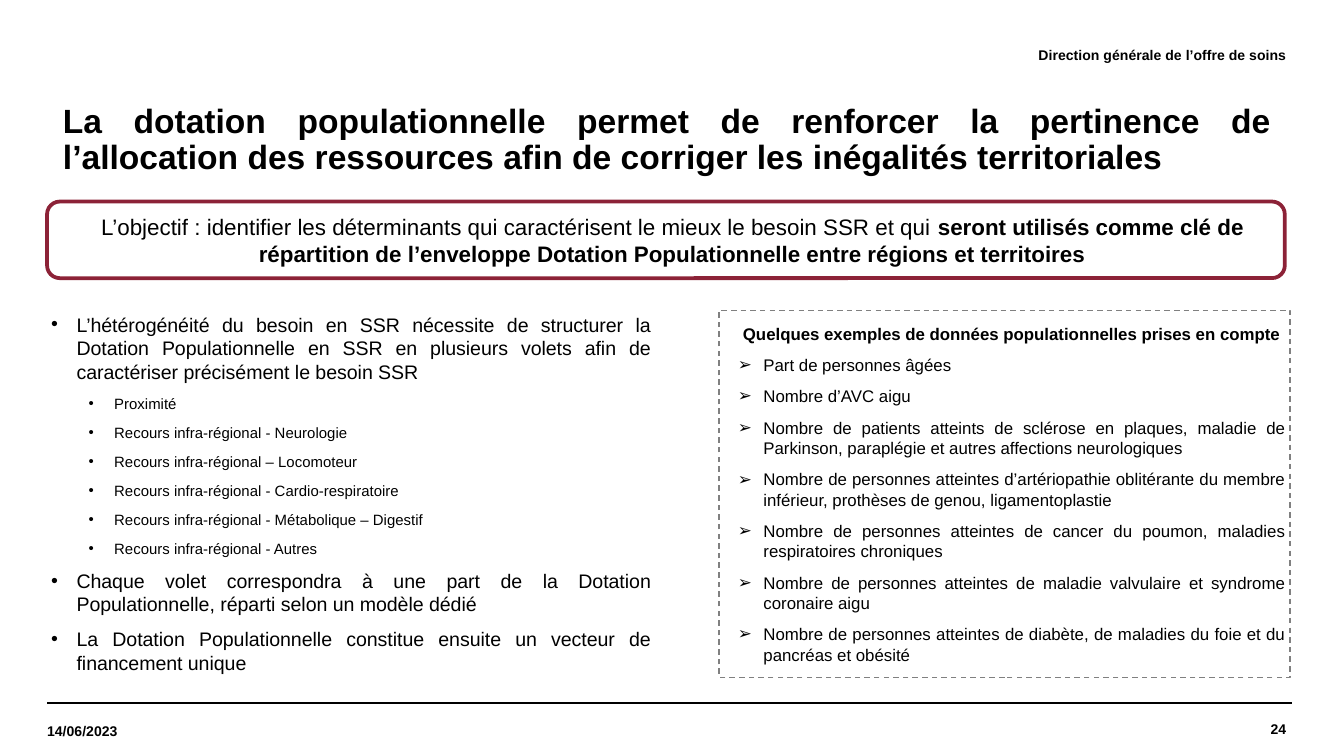
from dataclasses import dataclass

from lxml import etree
from pptx import Presentation
from pptx.dml.color import RGBColor
from pptx.enum.dml import MSO_LINE
from pptx.enum.shapes import MSO_CONNECTOR, MSO_SHAPE
from pptx.enum.text import MSO_ANCHOR, PP_ALIGN
from pptx.oxml.ns import qn
from pptx.util import Inches, Pt

LEFT, RIGHT = PP_ALIGN.LEFT, PP_ALIGN.RIGHT
CENTER, JUSTIFY = PP_ALIGN.CENTER, PP_ALIGN.JUSTIFY
MIDDLE = MSO_ANCHOR.MIDDLE
RECT, ROUND = MSO_SHAPE.RECTANGLE, MSO_SHAPE.ROUNDED_RECTANGLE
STRAIGHT, DASH = MSO_CONNECTOR.STRAIGHT, MSO_LINE.DASH


@dataclass(frozen=True)
class Theme:
    """Hold the colours, font and type sizes of the slide."""
    ink: RGBColor = RGBColor(0, 0, 0)
    wine: RGBColor = RGBColor(0x8C, 0x22, 0x37)
    grey: RGBColor = RGBColor(0x80, 0x80, 0x80)
    font: str = "Arial"
    title: float = 18
    goal: float = 12
    body: float = 10.5
    data: float = 9
    sub: float = 8
    small: float = 7.5


THEME = Theme()

TITLE = ("La dotation populationnelle permet de renforcer la pertinence de "
         "l’allocation des ressources afin de corriger les inégalités territoriales")
GOAL = ("L’objectif : identifier les déterminants qui caractérisent le mieux "
        "le besoin SSR et qui ")
KEY = ("seront utilisés comme clé de répartition de l’enveloppe Dotation "
       "Populationnelle entre régions et territoires")
NEED = ("L’hétérogénéité du besoin en SSR nécessite de structurer la Dotation "
        "Populationnelle en SSR en plusieurs volets afin de caractériser "
        "précisément le besoin SSR")
PARTS = [
    "Proximité",
    "Recours infra-régional - Neurologie",
    "Recours infra-régional – Locomoteur",
    "Recours infra-régional - Cardio-respiratoire",
    "Recours infra-régional - Métabolique – Digestif",
    "Recours infra-régional - Autres",
]
ENDS = [
    "Chaque volet correspondra à une part de la Dotation Populationnelle, "
    "réparti selon un modèle dédié",
    "La Dotation Populationnelle constitue ensuite un vecteur de financement unique",
]
HEAD = "Quelques exemples de données populationnelles prises en compte"
DATA = [
    "Part de personnes âgées",
    "Nombre d’AVC aigu",
    "Nombre de patients atteints de sclérose en plaques, maladie de Parkinson, "
    "paraplégie et autres affections neurologiques",
    "Nombre de personnes atteintes d’artériopathie oblitérante du membre "
    "inférieur, prothèses de genou, ligamentoplastie",
    "Nombre de personnes atteintes de cancer du poumon, maladies respiratoires "
    "chroniques",
    "Nombre de personnes atteintes de maladie valvulaire et syndrome coronaire aigu",
    "Nombre de personnes atteintes de diabète, de maladies du foie et du "
    "pancréas et obésité",
]


def set_frame(shape, inset):
    """Wrap the text of a shape, centre it in height and set its insets."""
    frame = shape.text_frame
    frame.word_wrap = True
    frame.vertical_anchor = MIDDLE
    if inset is not None:
        frame.margin_left = frame.margin_right = Inches(inset)
        frame.margin_top = frame.margin_bottom = Inches(inset)
    return frame


def add_box(slide, left, top, width, height, inset=0):
    """Add a text box and return its frame."""
    box = slide.shapes.add_textbox(
        Inches(left), Inches(top), Inches(width), Inches(height))
    return set_frame(box, inset)


def add_panel(slide, kind, left, top, width, height, color, weight,
              dash=None, inset=None):
    """Add an outlined shape without fill and return its frame."""
    panel = slide.shapes.add_shape(
        kind, Inches(left), Inches(top), Inches(width), Inches(height))
    panel.shadow.inherit = False
    panel.fill.background()
    panel.line.color.rgb = color
    panel.line.width = Pt(weight)
    if dash is not None:
        panel.line.dash_style = dash
    return set_frame(panel, inset)


def add_rule(slide, left, top, width):
    """Add a thin horizontal line."""
    rule = slide.shapes.add_connector(
        STRAIGHT, Inches(left), Inches(top), Inches(left + width), Inches(top))
    rule.line.color.rgb = THEME.ink
    rule.line.width = Pt(0.8)
    etree.SubElement(rule._element.spPr, qn("a:effectLst"))


def add_run(para, text, size, bold=False):
    """Add a run of text to a paragraph."""
    run = para.add_run()
    run.text = text
    font = run.font
    font.name, font.size, font.bold = THEME.font, Pt(size), bold
    font.color.rgb = THEME.ink


def add_text(frame, text, size, bold=False, align=LEFT, indent=0, hang=0,
             after=0, lines=None, bullet=None, level=0):
    """Write one paragraph into a frame and return it."""
    para = frame.paragraphs[0]
    if para.runs:
        para = frame.add_paragraph()
    para.alignment, para.level = align, level
    para.space_after = Pt(after)
    if lines:
        para.line_spacing = lines
    props = para._p.get_or_add_pPr()
    props.set("marL", str(Inches(indent)))
    props.set("indent", str(Inches(-hang)))
    if bullet:
        etree.SubElement(props, qn("a:buFont"), typeface=THEME.font)
        etree.SubElement(props, qn("a:buChar"), char=bullet)
    add_run(para, text, size, bold)
    return para


def add_items(frame, texts, size, bullet="•", indent=0.29, level=0):
    """Write a list of bulleted paragraphs."""
    for text in texts:
        add_text(frame, text, size, align=JUSTIFY, indent=indent, hang=0.19,
                 after=6, bullet=bullet, level=level)


def main():
    """Build the slide and save it."""
    deck = Presentation()
    deck.slide_width = Inches(10)
    deck.slide_height = deck.slide_width * 9 // 16
    slide = deck.slides.add_slide(deck.slide_layouts[6])

    for left in (0.35, 0.39):
        add_rule(slide, left, 5.23, 9.22)
    labels = [
        ("24", RIGHT, (8.09, 5.23, 1.48, 0.39)),
        ("14/06/2023", LEFT, (0.35, 5.25, 1.28, 0.38)),
        ("Direction générale de l’offre de soins", RIGHT, (3.14, 0.21, 6.43, 0.39)),
    ]
    for text, align, place in labels:
        add_text(add_box(slide, *place), text, THEME.small, bold=True, align=align)

    title = add_box(slide, 0.35, 0.75, 9.21, 0.59, inset=None)
    add_text(title, TITLE, THEME.title, bold=True, align=JUSTIFY,
             indent=0.02, lines=0.9)

    body = add_box(slide, 0.28, 2.18, 4.57, 2.98)
    add_items(body, [NEED], THEME.body)
    add_items(body, PARTS, THEME.sub, indent=0.57, level=1)
    add_items(body, ENDS, THEME.body)

    goal = add_panel(slide, ROUND, 0.35, 1.5, 9.21, 0.57, THEME.wine, 2)
    para = add_text(goal, GOAL, THEME.goal, align=CENTER, indent=0.1, after=5)
    add_run(para, KEY, THEME.goal, bold=True)

    data = add_panel(slide, RECT, 5.35, 2.31, 4.25, 2.73, THEME.grey, 0.75,
                     dash=DASH, inset=0.04)
    add_text(data, HEAD, THEME.data, bold=True, align=CENTER, indent=0.1, after=6)
    add_items(data, DATA, THEME.data, bullet="➢")

    deck.save("out.pptx")


if __name__ == "__main__":
    main()
